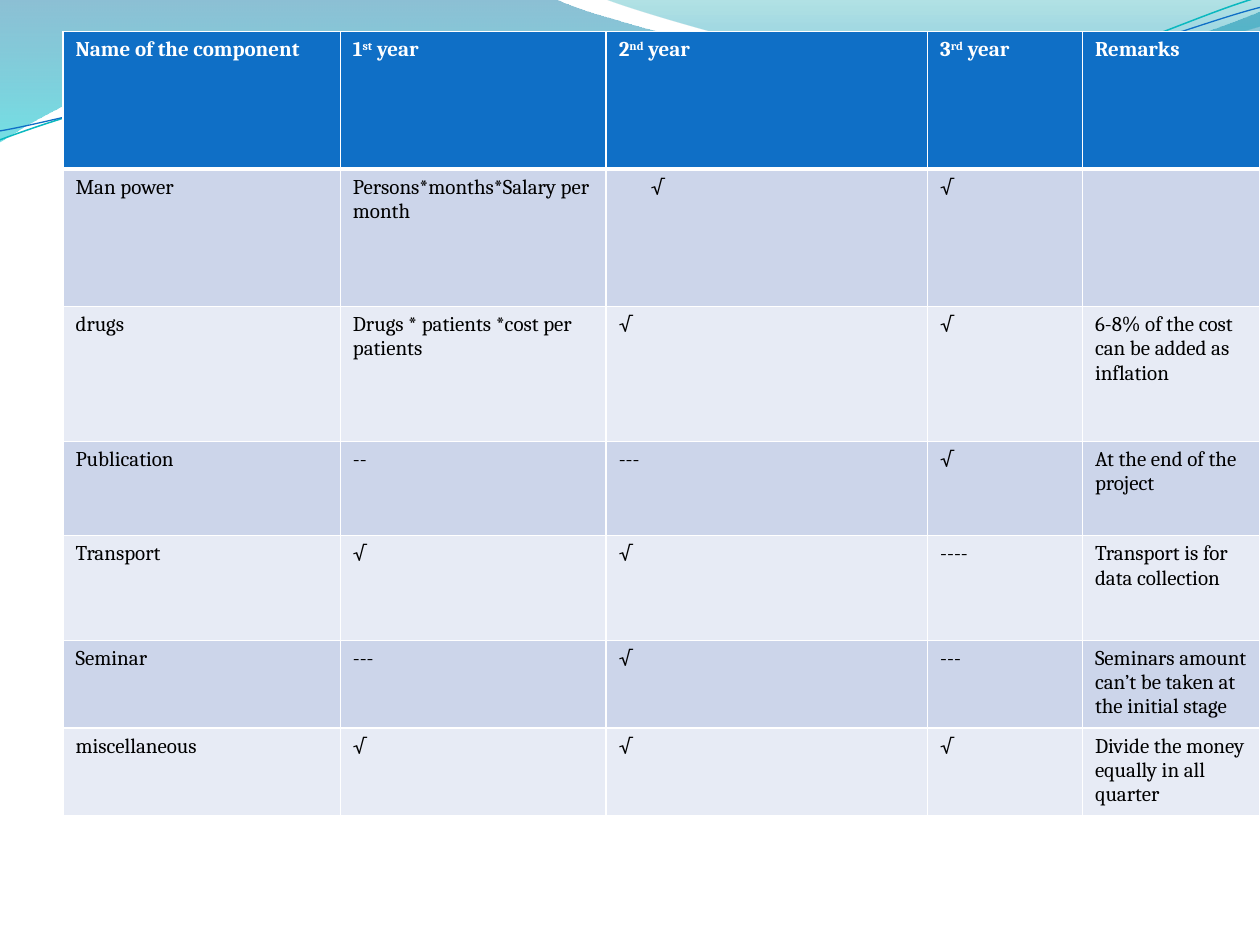
from dataclasses import dataclass

import pptx
import pptx.dml.color
import pptx.oxml
import pptx.oxml.ns
import pptx.util
from pptx.util import Cm


@dataclass(frozen=True)
class Theme:
    font: str = "Cambria"
    text_size: int = 12
    header: str = "0F6FC6"
    bands: tuple = ("CCD5EA", "E7EBF5")
    white: str = "FFFFFF"
    black: str = "000000"
    teal: str = "0AB8BF"
    # Gradient stops: position, colour, opacity in percent
    wide_wave: tuple = ((0, "0074A1", 45), (1, "00C6CF", 55))
    right_wave: tuple = ((0, "00A1A9", 30), (0.8, "008BBF", 45))


THEME = Theme()

# Each path is a start point followed by segments in cm:
# one point is a straight line, three points are a cubic curve.
WIDE_WAVE = [
    (0, 0),
    [(11.18, -0.03)],
    [(12.09, 0.43), (16.87, 1.6), (19.25, 1.6)],
    [(21.67, 1.6), (24.33, 0.66), (25.4, 0.23)],
    [(25.43, 0.91)],
    [(24.97, 1.12), (22.1, 1.93), (18.95, 1.91)],
    [(15.8, 1.91), (9.7, 0.71), (6.53, 0.86)],
    [(3.28, 0.91), (1.17, 2.11), (-0.03, 2.87)],
    [(0, 0)],
]
RIGHT_WAVE = [
    (12.17, -0.03),
    [(12.93, 0.28), (17.32, 1.57), (19.53, 1.65)],
    [(21.74, 1.75), (24.41, 0.81), (25.4, 0.53)],
    [(25.4, 0)],
    [(12.17, -0.03)],
]
# The strands are given level and then turned together.
STRAND_ROTATION = 357.3
TEAL_STRAND = [
    (-0.05, 2.22),
    [(1.19, 1.82), (4.02, 1.04), (7.05, 1.05)],
    [(10.05, 1.07), (15.02, 2.37), (18.08, 2.29)],
    [(21.13, 2.2), (23.86, 0.91), (25.41, 0.55)],
]
BLUE_STRAND = [
    (-0.04, 2.04),
    [(1.16, 1.9), (4.17, 1.15), (7.2, 1.16)],
    [(10.25, 1.18), (15.13, 2.25), (18.19, 2.16)],
    [(21.21, 2.1), (23.93, 1.06), (25.45, 0.75)],
]

COLUMN_WIDTHS = (5.59, 5.36, 6.48, 3.12, 3.58)
ROW_HEIGHTS = (2.77, 2.77, 2.72, 1.9, 2.11, 1.77, 1.77)
# The second part of a heading is superscript.
HEADINGS = [
    ("Name of the component",),
    ("1", "st", " year"),
    ("2", "nd", " year"),
    ("3", "rd", " year"),
    ("Remarks",),
]
COMPONENTS = [
    ("Man power", "Persons*months*Salary per month", "√", "√", ""),
    ("drugs", "Drugs * patients *cost per patients", "√", "√",
     "6-8% of the cost can be added as inflation"),
    ("Publication", "--", "---", "√", "At the end of the project"),
    ("Transport", "√", "√", "----", "Transport is for data collection"),
    ("Seminar", "---", "√", "---",
     "Seminars amount can’t be taken at the initial stage"),
    ("miscellaneous", "√", "√", "√", "Divide the money equally in all quarter"),
]


def rgb(value):
    return pptx.dml.color.RGBColor.from_string(value)


def add_path(shapes, left, top, path, close):
    """Add an outline through all points, then turn point triples into curves."""
    start, *segments = path
    points = [(Cm(left + x), Cm(top + y))
              for x, y in [start, *(point for segment in segments for point in segment)]]
    builder = shapes.build_freeform(*points[0])
    builder.add_line_segments(points[1:], close=close)
    outline = builder.convert_to_shape()
    outline.shadow.inherit = False

    lines = iter(list(outline._element.iter(pptx.oxml.ns.qn("a:lnTo"))))
    for segment in segments:
        steps = [next(lines) for _ in segment]
        if len(steps) == 3:
            curve = pptx.oxml.parse_xml(
                f'<a:cubicBezTo {pptx.oxml.ns.nsdecls("a")}/>')
            steps[0].addprevious(curve)
            for step in steps:
                curve.append(step[0])
                step.getparent().remove(step)
    return outline


def add_wave(shapes, left, top, path, stops):
    wave = add_path(shapes, left, top, path, close=True)
    wave.line.fill.background()
    wave.fill.gradient()
    wave.fill.gradient_angle = 270
    for stop, (position, color, opacity) in zip(wave.fill.gradient_stops, stops):
        stop.position = position
        stop.color.rgb = rgb(color)
        color_xml = stop._gs.find(pptx.oxml.ns.qn("a:srgbClr"))
        color_xml.append(pptx.oxml.parse_xml(
            f'<a:alpha {pptx.oxml.ns.nsdecls("a")} val="{opacity * 1000}"/>'))


def add_strand(shapes, left, top, path, color, width):
    strand = add_path(shapes, left, top, path, close=False)
    strand.rotation = STRAND_ROTATION
    strand.fill.background()
    strand.line.color.rgb = rgb(color)
    strand.line.width = pptx.util.Pt(width)


def add_wave_header(slide, left, top):
    add_wave(slide.shapes, left, top, WIDE_WAVE, THEME.wide_wave)
    add_wave(slide.shapes, left, top, RIGHT_WAVE, THEME.right_wave)
    strands = slide.shapes.add_group_shape().shapes
    add_strand(strands, left, top, TEAL_STRAND, THEME.teal, 0.85)
    add_strand(strands, left, top, BLUE_STRAND, THEME.header, 0.75)


def set_borders(cell, bottom_width):
    """Draw white borders; call before filling, as borders precede the fill."""
    widths = {"lnL": 1, "lnR": 1, "lnT": 1, "lnB": bottom_width}
    for side, width in widths.items():
        cell._tc.get_or_add_tcPr().append(pptx.oxml.parse_xml(
            f'<a:{side} {pptx.oxml.ns.nsdecls("a")} w="{pptx.util.Pt(width)}">'
            f'<a:solidFill><a:srgbClr val="{THEME.white}"/></a:solidFill></a:{side}>'))


def fill_cell(cell, parts, background, color, bold):
    cell.fill.solid()
    cell.fill.fore_color.rgb = rgb(background)
    for index, part in enumerate(parts):
        if not part:
            continue
        run = cell.text_frame.paragraphs[0].add_run()
        run.text = part
        run.font.name = THEME.font
        run.font.size = pptx.util.Pt(THEME.text_size)
        run.font.bold = bold
        run.font.color.rgb = rgb(color)
        if index == 1:
            run._r.get_or_add_rPr().set("baseline", "30000")


def add_budget_table(slide, left, top):
    rows = [HEADINGS] + [[(text,) for text in row] for row in COMPONENTS]
    budget = slide.shapes.add_table(
        len(rows), len(COLUMN_WIDTHS), Cm(left), Cm(top),
        Cm(sum(COLUMN_WIDTHS)), Cm(sum(ROW_HEIGHTS))).table
    for column, width in zip(budget.columns, COLUMN_WIDTHS):
        column.width = Cm(width)
    for row, height in zip(budget.rows, ROW_HEIGHTS):
        row.height = Cm(height)
    for r, row in enumerate(rows):
        is_header = r == 0
        background = THEME.header if is_header else THEME.bands[(r - 1) % 2]
        color = THEME.white if is_header else THEME.black
        for c, parts in enumerate(row):
            cell = budget.cell(r, c)
            set_borders(cell, 3 if is_header else 1)
            fill_cell(cell, parts, background, color, is_header)
    budget.cell(1, 2).margin_left = Cm(0.9)


def main():
    deck = pptx.Presentation()
    deck.slide_width, deck.slide_height = Cm(25.4), Cm(19.05)
    slide = deck.slides.add_slide(deck.slide_layouts[6])
    add_wave_header(slide, 0, 0)
    add_budget_table(slide, 1.27, 0.64)
    deck.save("out.pptx")


if __name__ == "__main__":
    main()
